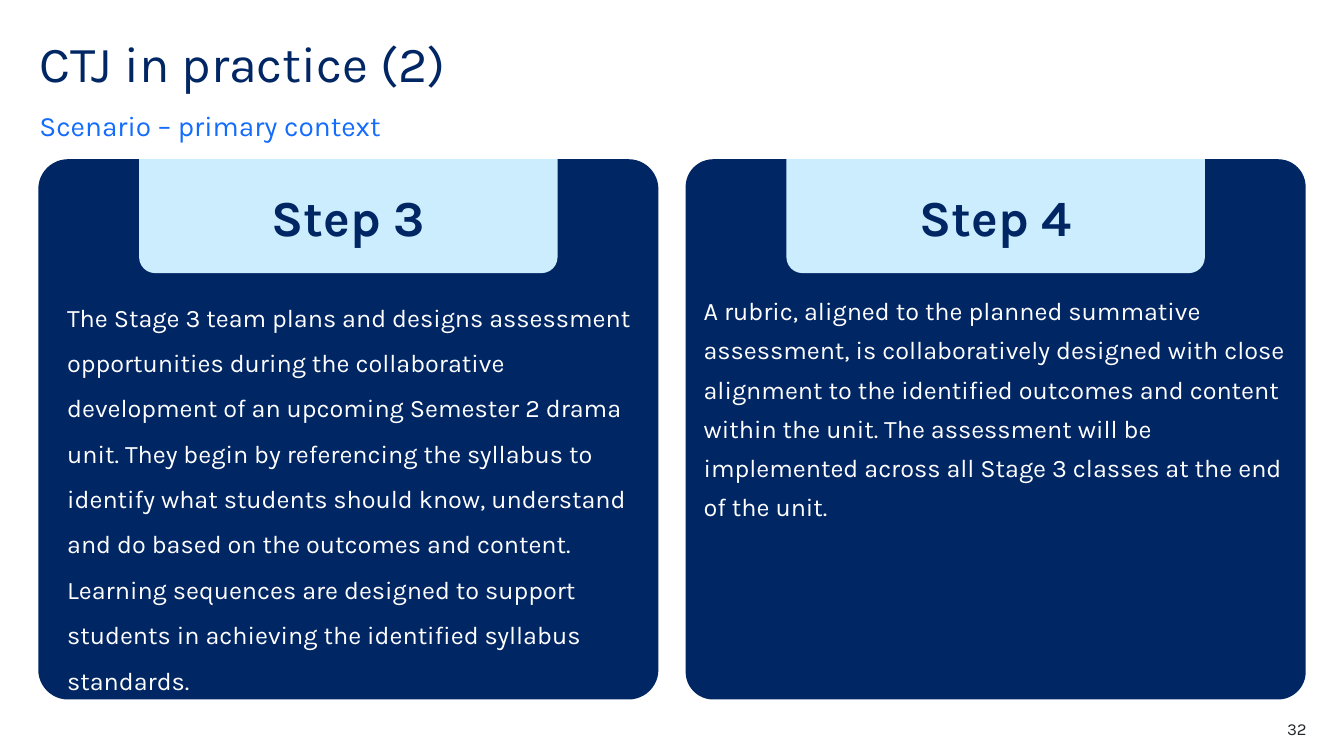
from dataclasses import dataclass

from pptx import Presentation
from pptx import util as u
from pptx.dml.color import RGBColor
from pptx.enum import shapes, text

PX = 9144  # EMU: 100 px to the inch


@dataclass(frozen=True)
class Theme:
    font: str = "Karla"
    navy: str = "002664"
    blue: str = "146CFD"
    pale: str = "CBEDFD"
    white: str = "FFFFFF"
    ink: str = "22272B"
    heading: int = 36
    subtitle: int = 20
    body: int = 18
    number: int = 12


T = Theme()
A, P = text.MSO_ANCHOR, text.PP_ALIGN

STEPS = [
    dict(name="Step 3", radius=0.055, indent=20,
         fmt=dict(line_spacing=1.5, space_after=u.Pt(12)),
         words="The Stage 3 team plans and designs assessment opportunities during the "
               "collaborative development of an upcoming Semester 2 drama unit. They begin by "
               "referencing the syllabus to identify what students should know, understand and "
               "do based on the outcomes and content. Learning sequences are designed to "
               "support students in achieving the identified syllabus standards."),
    dict(name="Step 4", radius=0.051, indent=10, fmt=dict(line_spacing=1.3),
         words="A rubric, aligned to the planned summative assessment, is collaboratively "
               "designed with close alignment to the identified outcomes and content within the "
               "unit. The assessment will be implemented across all Stage 3 classes at the end "
               "of the unit."),
]


def px(*values):
    return [u.Emu(v * PX) for v in values]


def write(sp, words, size, color, insets=(0, 0, 0, 0), anchor=A.TOP, bold=False, **fmt):
    """Fill a shape with one paragraph; insets are left, top, right, bottom in px."""
    tf = sp.text_frame
    left, top, right, bottom = px(*insets)
    frame = dict(word_wrap=True, vertical_anchor=anchor, margin_left=left,
                 margin_top=top, margin_right=right, margin_bottom=bottom)
    p = tf.paragraphs[0]
    r = p.add_run()
    r.text = words
    font = dict(name=T.font, size=u.Pt(size), bold=bold)
    for target, values in ((tf, frame), (p, dict(alignment=P.LEFT) | fmt), (r.font, font)):
        for key, value in values.items():
            setattr(target, key, value)
    r.font.color.rgb = RGBColor.from_string(color)


def add_text(s, box, words, size, color, **fmt):
    write(s.shapes.add_textbox(*px(*box)), words, size, color, **fmt)


def add_block(s, kind, box, fill, adjustments):
    sp = s.shapes.add_shape(kind, *px(*box))
    sp.shadow.inherit = False
    sp.fill.solid()
    sp.fill.fore_color.rgb = RGBColor.from_string(fill)
    sp.line.fill.background()
    for i, value in enumerate(adjustments):
        sp.adjustments[i] = value
    return sp


def add_header(s, box):
    x, y, w, h = box
    add_text(s, (x, y, w, 60), "CTJ in practice (2)", T.heading, T.navy, line_spacing=0.9)
    add_text(s, (x, y + h - 34, w, 34), "Scenario – primary context", T.subtitle, T.blue,
             anchor=A.BOTTOM, line_spacing=1.5, space_after=u.Pt(12))


def add_step(s, box, step):
    """Dark card with a pale tab hanging from its top edge."""
    x, y, w, h = box
    tab_w, tab_h = 415, 113
    card = add_block(s, shapes.MSO_SHAPE.ROUNDED_RECTANGLE, box, T.navy, [step["radius"]])
    write(card, step["words"], T.body, T.white, (step["indent"], tab_h + 5, 10, 5),
          **step["fmt"])
    tab = add_block(s, shapes.MSO_SHAPE.ROUND_2_SAME_RECTANGLE,
                    (x + (w - tab_w) // 2, y, tab_w, tab_h), T.pale, [0, 0.14])
    write(tab, step["name"], T.heading, T.navy, (10, 10, 10, 5), A.MIDDLE, True,
          alignment=P.CENTER)


def main():
    prs = Presentation()
    prs.slide_width, prs.slide_height = px(1333, 750)
    s = prs.slides.add_slide(prs.slide_layouts[6])
    add_header(s, (39, 39, 1102, 102))
    card_w, gap = 615, 27
    for i, step in enumerate(STEPS):
        add_step(s, (38 + i * (card_w + gap), 158, card_w, 536), step)
    add_text(s, (1217, 713, 79, 20), "32", T.number, T.ink, alignment=P.RIGHT)
    prs.save("out.pptx")


if __name__ == "__main__":
    main()
